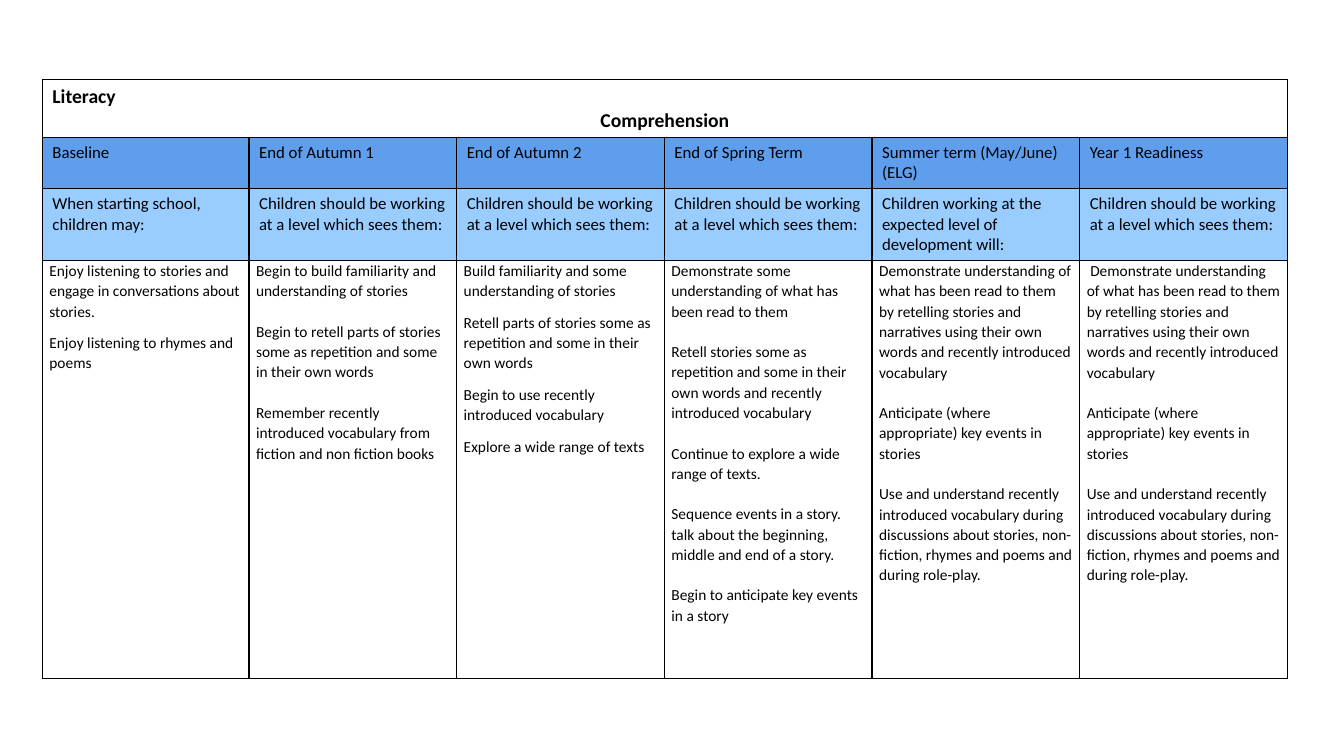
from lxml import etree
from pptx import Presentation
from pptx import util as u
from pptx.dml.color import RGBColor
from pptx.enum import text
from pptx.oxml import ns

COLORS = {"ink": "000000", "stage": "5E9EEC", "lead": "99CCFF"}

LEVEL = "Children should be working at a level which sees them:"
STORY_OPENING = "Sequence events in a story."
RETELLING = ("Demonstrate understanding of what has been read to them by retelling stories and "
             "narratives using their own words and recently introduced vocabulary")
ELG_GOALS = [
    "Anticipate (where appropriate) key events in stories",
    "Use and understand recently introduced vocabulary during discussions about stories, "
    "non-fiction, rhymes and poems and during role-play.",
]
NARROW_GAP, LINE_GAP = 8, 14.4

# Each stage: heading, lead-in, gap after a goal in points, goals
STAGES = [
    ("Baseline", "When starting school, children may:", NARROW_GAP, [
        "Enjoy listening to stories and engage in conversations about stories.",
        "Enjoy listening to rhymes and poems"]),
    ("End of Autumn 1", LEVEL, LINE_GAP, [
        "Begin to build familiarity and understanding of stories",
        "Begin to retell parts of stories some as repetition and some in their own words",
        "Remember recently introduced vocabulary from fiction and non fiction books"]),
    ("End of Autumn 2", LEVEL, NARROW_GAP, [
        "Build familiarity and some understanding of stories",
        "Retell parts of stories some as repetition and some in their own words",
        "Begin to use recently introduced vocabulary",
        "Explore a wide range of texts"]),
    ("End of Spring Term", LEVEL, LINE_GAP, [
        "Demonstrate some understanding of what has been read to them",
        "Retell stories some as repetition and some in their own words and recently "
        "introduced vocabulary",
        "Continue to explore a wide range of texts.",
        STORY_OPENING,
        "talk about the beginning, middle and end of a story.",
        "Begin to anticipate key events in a story"]),
    ("Summer term (May/June) (ELG)", "Children working at the expected level of development will:",
     LINE_GAP, [RETELLING, *ELG_GOALS]),
    ("Year 1 Readiness", LEVEL, LINE_GAP, [" " + RETELLING, *ELG_GOALS]),
]


def add_borders(cell):
    properties = cell._tc.get_or_add_tcPr()
    for side in ("lnL", "lnR", "lnT", "lnB"):
        line = etree.SubElement(properties, ns.qn("a:" + side), w=str(u.Pt(1)))
        fill = etree.SubElement(line, ns.qn("a:solidFill"))
        etree.SubElement(fill, ns.qn("a:srgbClr"), val=COLORS["ink"])


def write(cell, lines, size, bold=False, fill=None):
    cell.text_frame.text = "\n".join(lines)
    for para in cell.text_frame.paragraphs:
        for span in para.runs:
            span.font.name = "Calibri"
            span.font.size = u.Pt(size)
            span.font.bold = bold
            span.font.color.rgb = RGBColor.from_string(COLORS["ink"])
    if fill:
        cell.fill.solid()
        cell.fill.fore_color.rgb = RGBColor.from_string(COLORS[fill])
    else:
        cell.fill.background()


deck = Presentation()
deck.slide_width, deck.slide_height = u.Inches(13.33), u.Inches(7.5)
page = deck.slides.add_slide(deck.slide_layouts[6])

# Table grid
row_heights = [0.57, 0.51, 0.7, 4.15]
column_width = 2.06
frame = page.shapes.add_table(
    len(row_heights), len(STAGES), u.Inches(0.42), u.Inches(0.79),
    u.Inches(column_width * len(STAGES)), u.Inches(sum(row_heights)))
table = frame.table
table.first_row = table.horz_banding = False
for row, height in zip(table.rows, row_heights):
    row.height = u.Inches(height)
for column in table.columns:
    column.width = u.Inches(column_width)
table.columns[0].width = u.Inches(2.05)
for cell in table.iter_cells():
    add_borders(cell)

# Title row
title = table.cell(0, 0)
title.merge(table.cell(0, len(STAGES) - 1))
write(title, ["Literacy", "Comprehension"], 14, bold=True)
title.text_frame.paragraphs[1].alignment = text.PP_ALIGN.CENTER

# One column per stage
for index, (heading, lead, gap, goals) in enumerate(STAGES):
    write(table.cell(1, index), [heading], 12, fill="stage")
    write(table.cell(2, index), [lead], 12, fill="lead")
    body = table.cell(3, index)
    write(body, goals, 11)
    body.margin_left = body.margin_right = u.Inches(0.07)
    body.margin_top = body.margin_bottom = 0
    for para in body.text_frame.paragraphs:
        para.line_spacing = 1.07
        para.space_after = u.Pt(0 if para.text == STORY_OPENING else gap)

deck.save("out.pptx")
